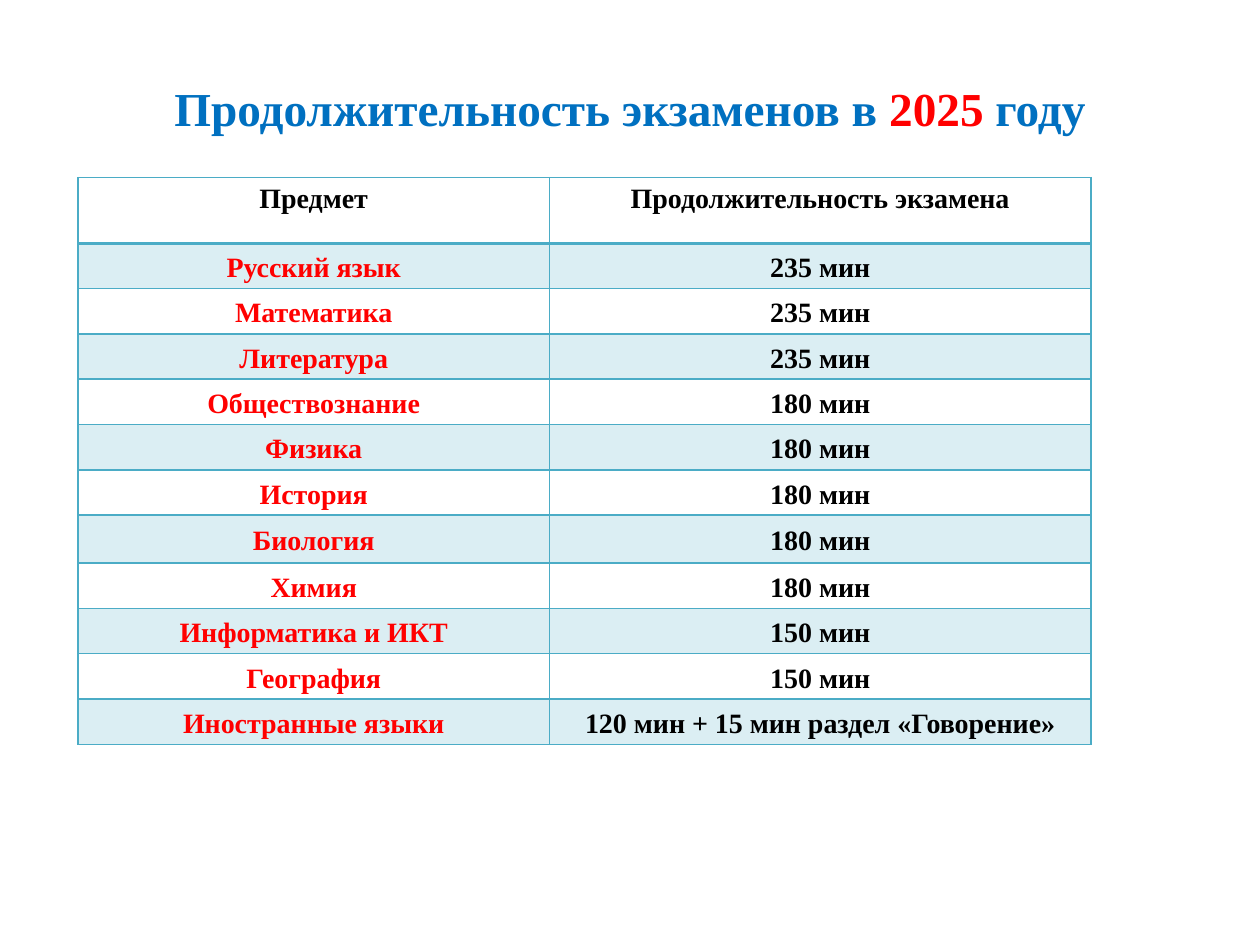
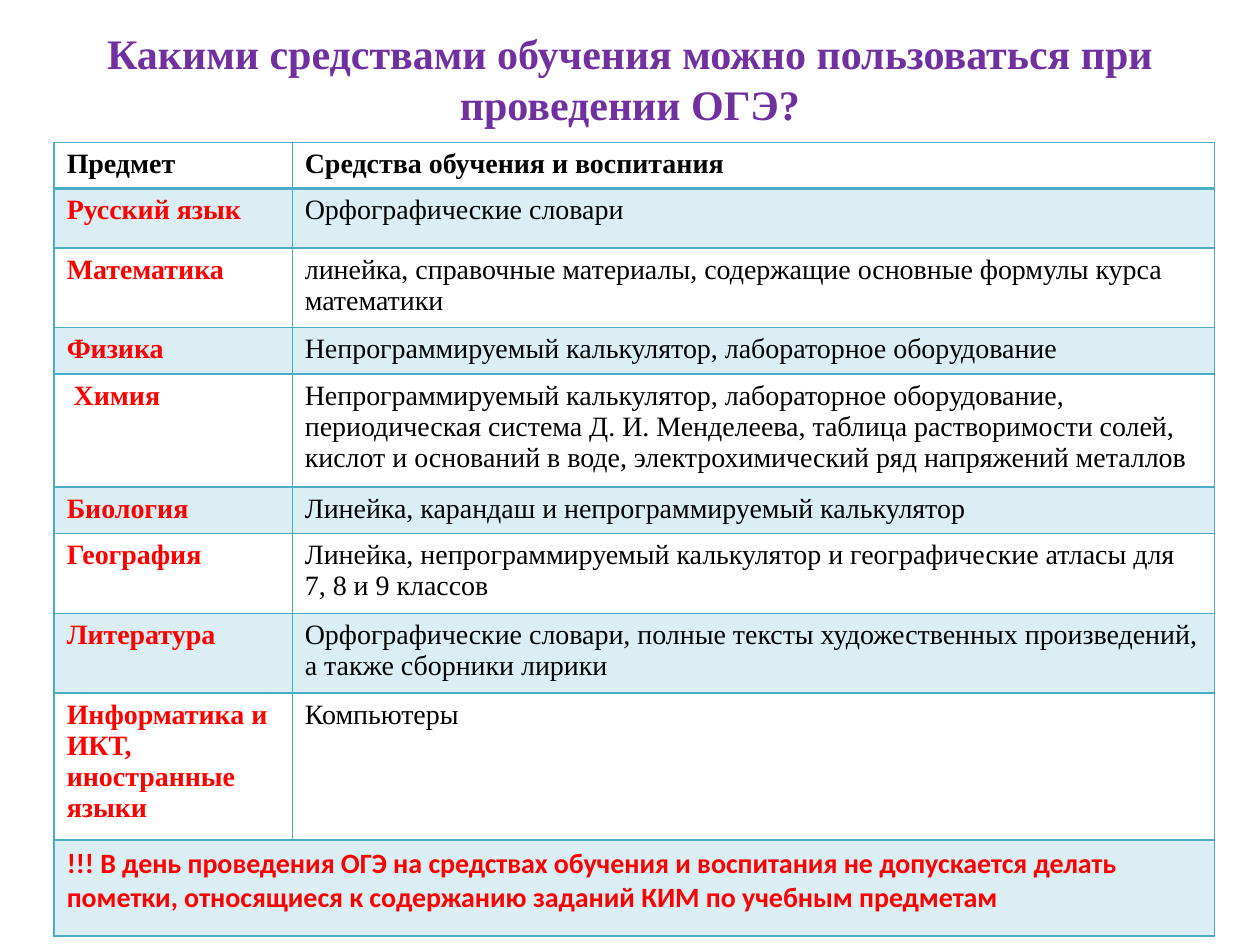
from lxml.etree import SubElement
from pptx import Presentation
from pptx.dml.color import RGBColor
from pptx.enum.text import MSO_ANCHOR as Anchor, PP_ALIGN as Align
from pptx.oxml.ns import qn
from pptx.util import Inches, Pt

# Shared look
BLUE = RGBColor(0x00, 0x70, 0xC0)
PURPLE = RGBColor(0x70, 0x30, 0xA0)
RED = RGBColor(0xFF, 0x00, 0x00)
BLACK = RGBColor(0x00, 0x00, 0x00)
TEAL = RGBColor(0x4B, 0xAC, 0xC6)
SERIF = "Times New Roman"
BAND_OPACITY = 20


def write(frame, text, color=BLACK, size=16, bold=True, font=SERIF,
          align=Align.LEFT, line=None, after=None):
    """Add a run to the first paragraph of a text frame."""
    paragraph = frame.paragraphs[0]
    paragraph.alignment = align
    if line:
        paragraph.line_spacing = line
    if after:
        paragraph.space_after = Pt(after)
    run = paragraph.add_run()
    run.text = text
    run.font.name = font
    run.font.size = Pt(size)
    run.font.bold = bold
    run.font.color.rgb = color


def add_grid(slide, left, top, widths, heights):
    """Add a table with teal rules, a thick header rule and banded rows."""
    grid = slide.shapes.add_table(
        len(heights), len(widths), Inches(left), Inches(top),
        Inches(sum(widths)), Inches(sum(heights))).table
    grid.first_row = grid.horz_banding = False
    for column, width in zip(grid.columns, widths):
        column.width = Inches(width)
    for r, height in enumerate(heights):
        grid.rows[r].height = Inches(height)
        for c in range(len(widths)):
            cell = grid.cell(r, c)
            properties = cell._tc.get_or_add_tcPr()
            for side in ("lnL", "lnR", "lnT", "lnB"):
                thick = (r, side) in ((0, "lnB"), (1, "lnT"))
                rule = SubElement(properties, qn(f"a:{side}"), w=str(Pt(2 if thick else 1)))
                ink = SubElement(rule, qn("a:solidFill"))
                SubElement(ink, qn("a:srgbClr"), val=str(TEAL))
            if r % 2:
                cell.fill.solid()
                cell.fill.fore_color.rgb = TEAL
                tint = properties.find(qn("a:solidFill")).find(qn("a:srgbClr"))
                SubElement(tint, qn("a:alpha"), val=str(BAND_OPACITY * 1000))
            else:
                cell.fill.background()
    return grid


deck = Presentation()
deck.slide_width, deck.slide_height = Inches(10), Inches(7.5)

# Slides and their titles
titles = [
    (0.3, 1.11, 27, [("Продолжительность экзаменов в ", BLUE), ("2025 ", RED), ("году", BLUE)]),
    (0.14, 0.96, 24, [("Какими средствами обучения можно пользоваться при проведении ОГЭ?", PURPLE)]),
]
slides = []
for top, height, size, parts in titles:
    slide = deck.slides.add_slide(deck.slide_layouts[6])
    heading = slide.shapes.add_textbox(Inches(0.5), Inches(top), Inches(9), Inches(height)).text_frame
    heading.word_wrap = True
    heading.vertical_anchor = Anchor.MIDDLE
    for text, color in parts:
        write(heading, text, color=color, size=size, align=Align.CENTER)
    slides.append(slide)
durations_slide, aids_slide = slides

# Exam durations
durations = [
    ("Предмет", "Продолжительность экзамена"),
    ("Русский язык", "235 мин"),
    ("Математика", "235 мин"),
    ("Литература", "235 мин"),
    ("Обществознание", "180 мин"),
    ("Физика", "180 мин"),
    ("История", "180 мин"),
    ("Биология", "180 мин"),
    ("Химия", "180 мин"),
    ("Информатика и ИКТ", "150 мин"),
    ("География", "150 мин"),
    ("Иностранные языки", "120 мин + 15 мин раздел «Говорение»"),
]
heights = [0.52] + [0.36] * 6 + [0.38] + [0.36] * 4
duration_grid = add_grid(durations_slide, 0.62, 1.41, (3.74, 4.3), heights)
for r, row in enumerate(durations):
    for c, text in enumerate(row):
        cell = duration_grid.cell(r, c)
        if r == 0:
            write(cell.text_frame, text, align=Align.CENTER)
            continue
        cell.vertical_anchor = Anchor.MIDDLE
        cell.margin_left = cell.margin_right = Inches(0.07)
        cell.margin_top = cell.margin_bottom = 0
        write(cell.text_frame, text, color=BLACK if c else RED,
              align=Align.CENTER, line=1.15, after=6)

# Permitted aids
aids = [
    (0.35, "Предмет", "Средства обучения и воспитания"),
    (0.47, "Русский язык", "Орфографические словари"),
    (0.61, "Математика",
     "линейка, справочные материалы, содержащие основные формулы курса математики"),
    (0.35, "Физика", "Непрограммируемый калькулятор, лабораторное оборудование"),
    (0.86, " Химия",
     "Непрограммируемый калькулятор, лабораторное оборудование, периодическая система "
     "Д. И. Менделеева, таблица растворимости солей, кислот и оснований в воде, "
     "электрохимический ряд напряжений металлов"),
    (0.35, "Биология", "Линейка, карандаш и непрограммируемый калькулятор"),
    (0.61, "География",
     "Линейка, непрограммируемый калькулятор и географические атласы для 7, 8 и 9 классов"),
    (0.61, "Литература",
     "Орфографические словари, полные тексты художественных произведений, "
     "а также сборники лирики"),
    (1.12, "Информатика и ИКТ, иностранные языки", "Компьютеры"),
]
heights = [height for height, *_ in aids] + [0.76]
aid_grid = add_grid(aids_slide, 0.43, 1.13, (1.89, 7.32), heights)
for r, (_, subject, allowed) in enumerate(aids):
    write(aid_grid.cell(r, 0).text_frame, subject, color=RED if r else BLACK)
    write(aid_grid.cell(r, 1).text_frame, allowed, bold=r == 0)

# Warning across the last row
warning = aid_grid.cell(len(aids), 0)
warning.merge(aid_grid.cell(len(aids), 1))
write(warning.text_frame,
      "!!! В день проведения ОГЭ на средствах обучения и воспитания не допускается делать "
      "пометки, относящиеся к содержанию заданий КИМ по учебным предметам",
      color=RED, font="Calibri")

deck.save("out.pptx")
